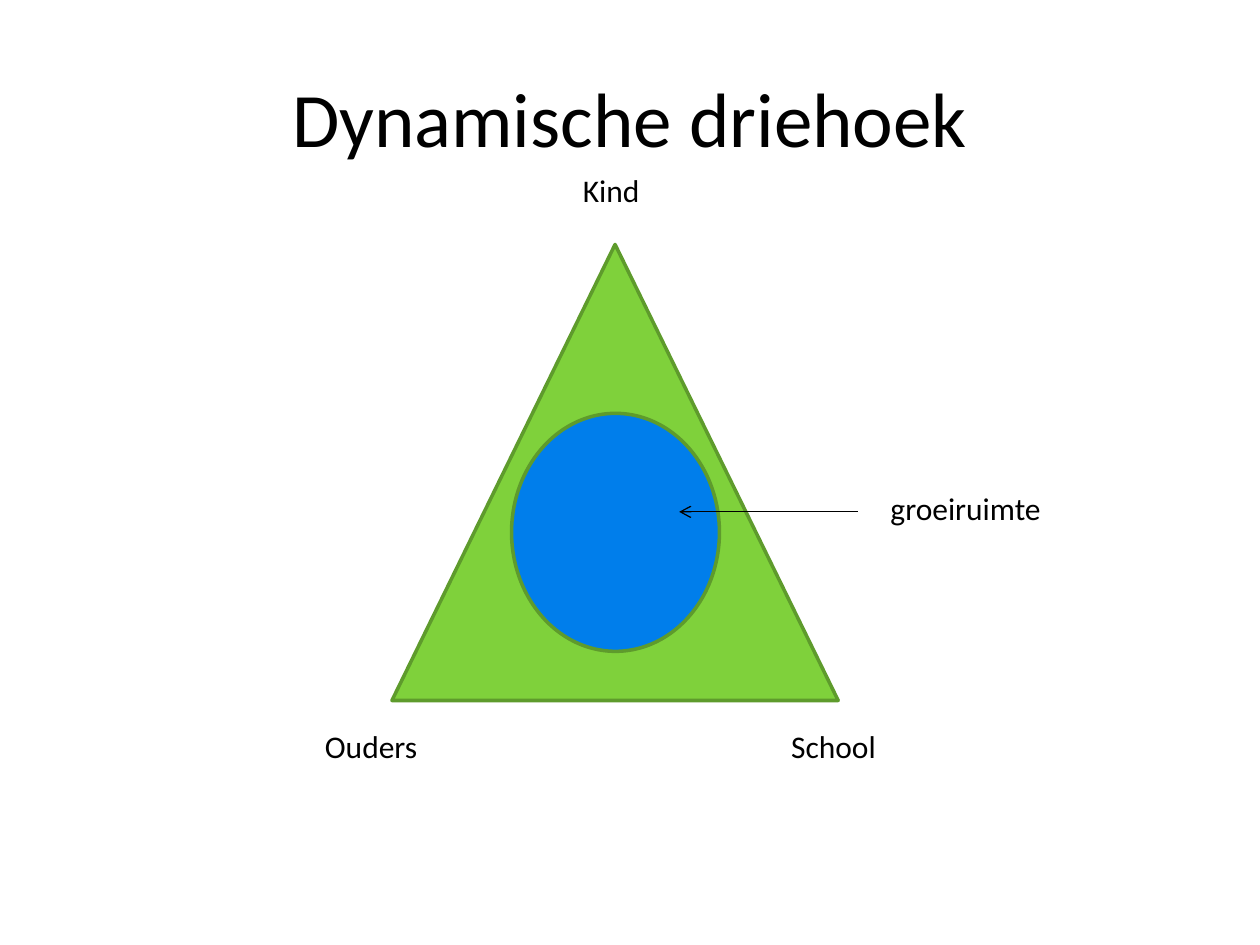
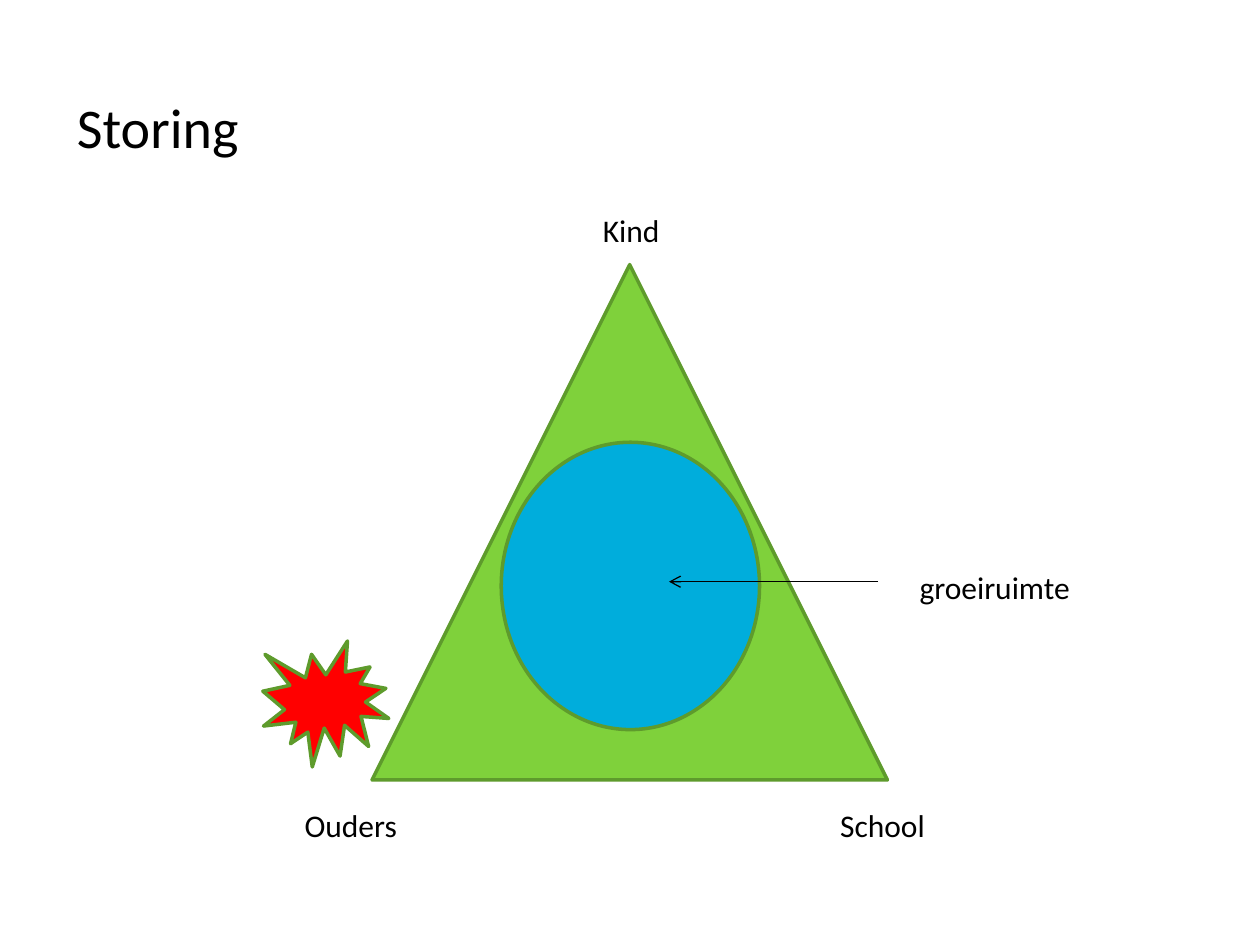
import pptx
import pptx.dml.color
import pptx.enum.shapes
import pptx.enum.text
import pptx.oxml.ns
import pptx.util
from dataclasses import dataclass
from lxml import etree

Pt = pptx.util.Pt
Shape = pptx.enum.shapes.MSO_SHAPE


@dataclass(frozen=True)
class Theme:
    font: str = "Calibri"
    title_size: float = 44
    body_size: float = 32
    label_size: float = 18
    text: str = "000000"
    triangle: str = "7FD13B"
    outline: str = "5E9B2C"
    disturbance: str = "FF0000"
    space_calm: str = "007EEB"
    space_disturbed: str = "00ADDC"
    outline_width: float = 2
    arrow_width: float = 0.75


THEME = Theme()
LABEL_HEIGHT = 28.8
LABEL_WIDTHS = {"Kind": 53, "Ouders": 80, "School": 64, "groeiruimte": 102}


def color(code):
    return pptx.dml.color.RGBColor.from_string(code)


# Text
def write_text(shape, text, size):
    shape.text_frame.text = text
    para = shape.text_frame.paragraphs[0]
    para.space_before = Pt(0)
    for span in para.runs:
        span.font.name = THEME.font
        span.font.size = Pt(size)
        span.font.color.rgb = color(THEME.text)
    return para


def place(shape, left, top, width, height):
    shape.left, shape.top = Pt(left), Pt(top)
    shape.width, shape.height = Pt(width), Pt(height)


def add_label(page, text, left, top):
    box = page.shapes.add_textbox(
        Pt(left), Pt(top), Pt(LABEL_WIDTHS[text]), Pt(LABEL_HEIGHT))
    box.text_frame.word_wrap = True
    write_text(box, text, THEME.label_size)


# Outlined preset shapes
def add_figure(page, kind, bounds, fill):
    figure = page.shapes.add_shape(kind, *(Pt(length) for length in bounds))
    figure.shadow.inherit = False
    figure.fill.solid()
    figure.fill.fore_color.rgb = color(fill)
    figure.line.color.rgb = color(THEME.outline)
    figure.line.width = Pt(THEME.outline_width)


# Horizontal arrow, pointing at its end
def add_arrow(page, start, end, y):
    arrow = page.shapes.add_connector(
        pptx.enum.shapes.MSO_CONNECTOR.STRAIGHT, Pt(start), Pt(y), Pt(end), Pt(y))
    arrow.line.color.rgb = color(THEME.text)
    arrow.line.width = Pt(THEME.arrow_width)
    qn = pptx.oxml.ns.qn
    etree.SubElement(arrow.line._get_or_add_ln(), qn("a:tailEnd"), type="arrow")
    etree.SubElement(arrow._element.spPr, qn("a:effectLst"))


# Triangle with growth space, pointer and labels
def add_diagram(page, triangle, space, space_fill, arrow, labels):
    add_figure(page, Shape.ISOSCELES_TRIANGLE, triangle, THEME.triangle)
    add_figure(page, Shape.FLOWCHART_CONNECTOR, space, space_fill)
    add_arrow(page, *arrow)
    for text, (left, top) in labels.items():
        add_label(page, text, left, top)


def build_dynamic_triangle(deck):
    page = deck.slides.add_slide(deck.slide_layouts[5])
    title = page.shapes.title
    place(title, 36, 21.6, 648, 90)
    title.text_frame.vertical_anchor = pptx.enum.text.MSO_ANCHOR.MIDDLE
    para = write_text(title, "Dynamische driehoek", THEME.title_size)
    para.alignment = pptx.enum.text.PP_ALIGN.CENTER
    add_diagram(
        page,
        triangle=(224, 139.7, 255, 260.6),
        space=(292.3, 236.2, 118.8, 136),
        space_fill=THEME.space_calm,
        arrow=(490.3, 388.1, 292.5),
        labels={"Kind": (326, 94.3), "Ouders": (178.6, 411.8),
                "School": (445, 411.8), "groeiruimte": (501.8, 275.8)})


def build_disturbance(deck):
    page = deck.slides.add_slide(deck.slide_layouts[1])
    title = page.shapes.title._element
    title.getparent().remove(title)
    body = page.placeholders[1]
    place(body, 36.7, 49, 657.4, 476)
    para = write_text(body, "Storing", THEME.body_size)
    # Hanging indent without a bullet
    properties = para._p.get_or_add_pPr()
    properties.set("marL", str(Pt(27)))
    properties.set("indent", str(-Pt(27)))
    etree.SubElement(properties, pptx.oxml.ns.qn("a:buNone"))
    add_diagram(
        page,
        triangle=(212.6, 151.2, 294.5, 294.5),
        space=(286.4, 252.7, 147.6, 164.2),
        space_fill=THEME.space_disturbed,
        arrow=(501.8, 382.3, 332.4),
        labels={"Kind": (337.4, 116.8), "Ouders": (167, 457),
                "School": (473, 457), "groeiruimte": (518.4, 321)})
    add_figure(page, Shape.EXPLOSION1, (150.2, 366.3, 72, 72), THEME.disturbance)


def main():
    deck = pptx.Presentation()
    deck.slide_width, deck.slide_height = Pt(720), Pt(540)
    build_dynamic_triangle(deck)
    build_disturbance(deck)
    deck.save("out.pptx")


if __name__ == "__main__":
    main()
